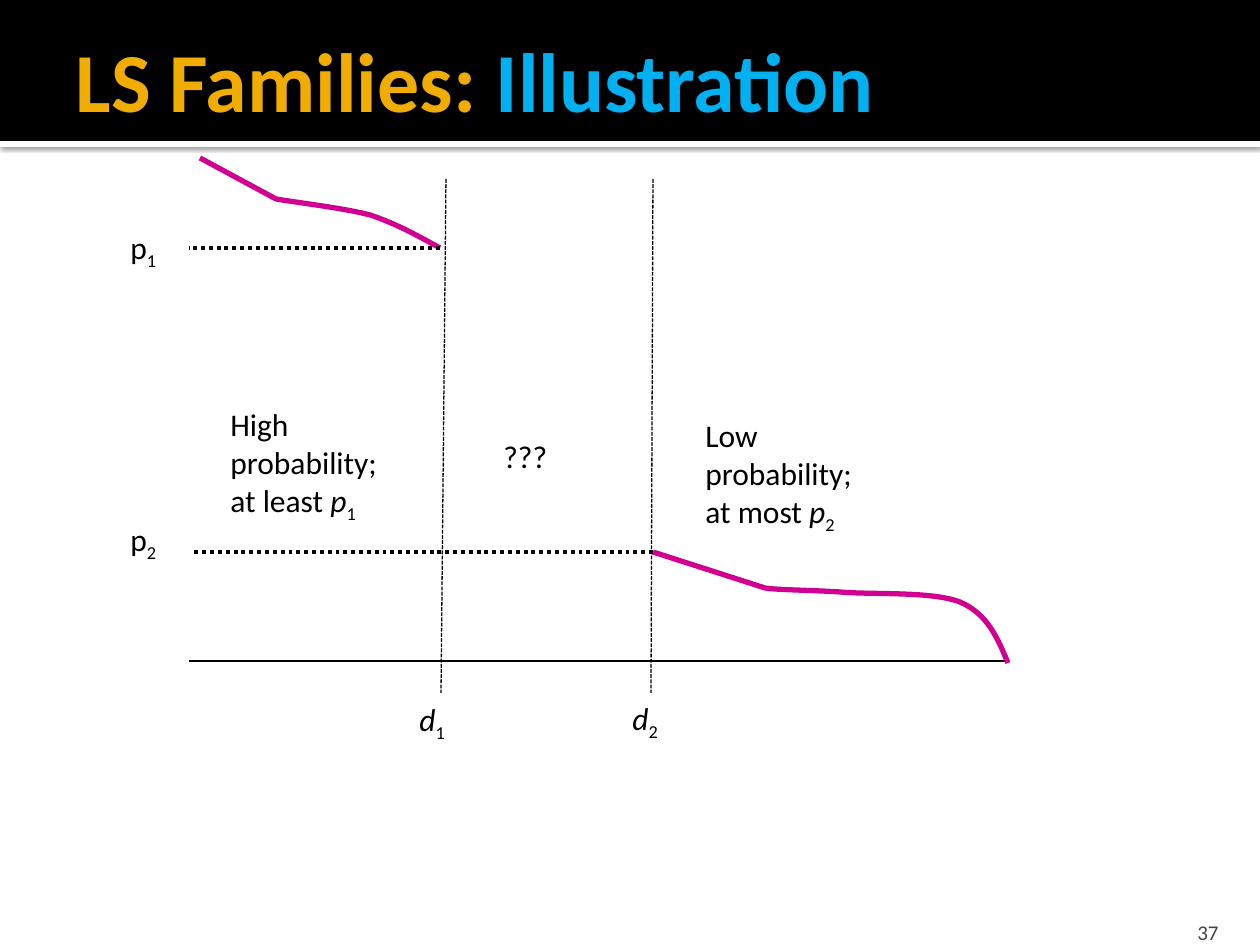
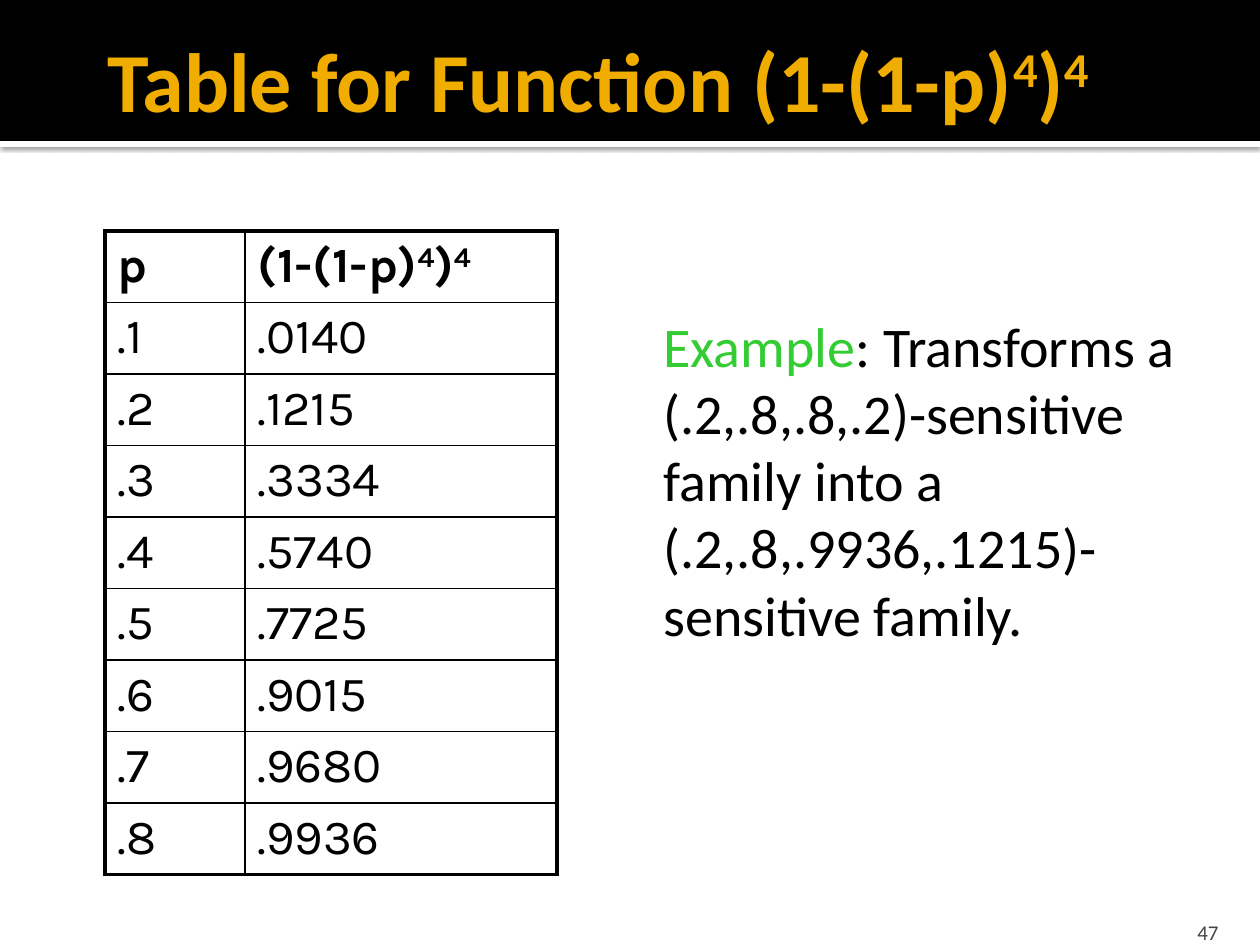
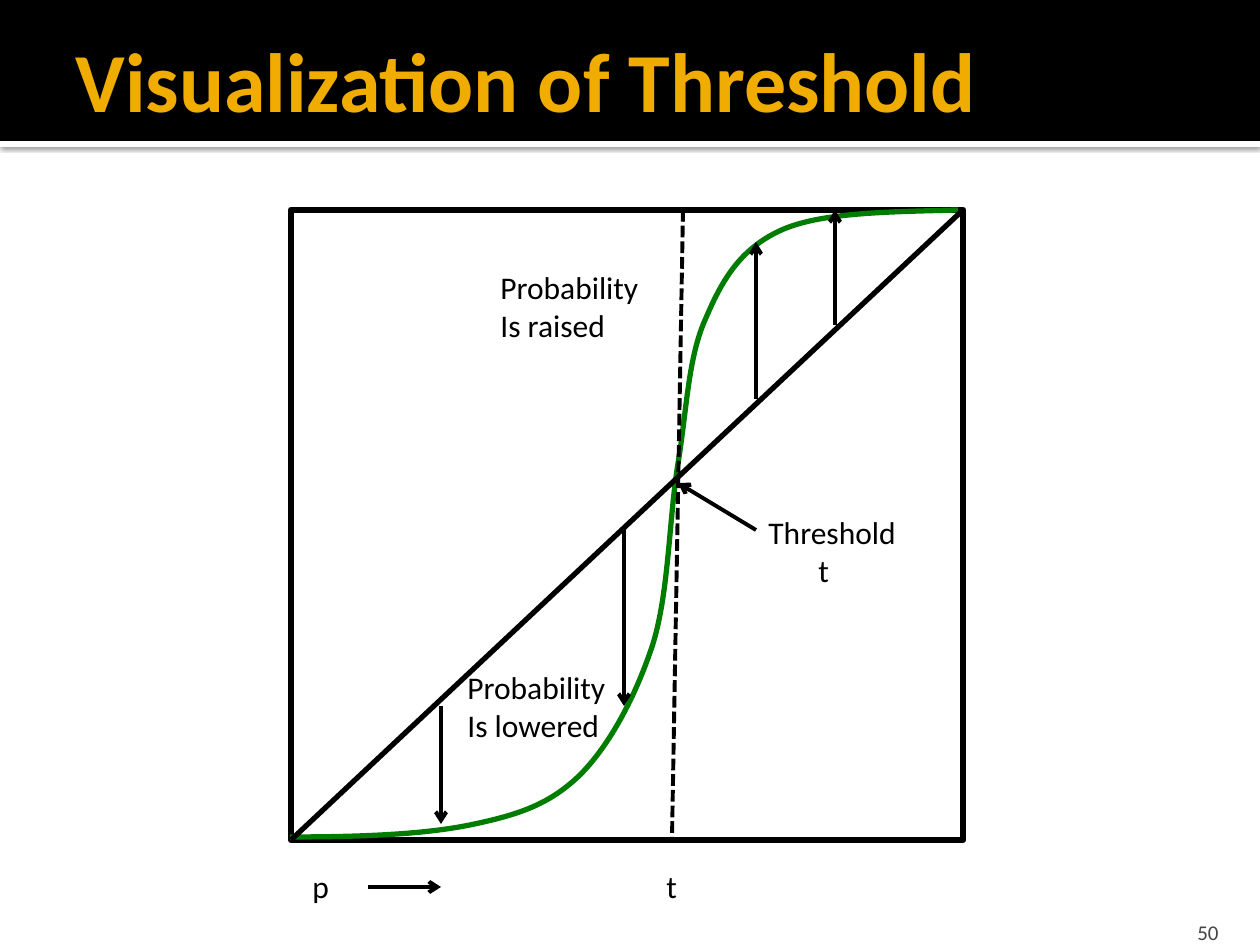
from dataclasses import dataclass

from pptx import Presentation
from pptx.dml.color import RGBColor
from pptx.enum.dml import MSO_LINE
from pptx.enum.shapes import MSO_CONNECTOR, MSO_SHAPE
from pptx.enum.text import MSO_ANCHOR, MSO_AUTO_SIZE, PP_ALIGN
from pptx.oxml import parse_xml
from pptx.oxml.ns import nsdecls, qn
from pptx.oxml.xmlchemy import OxmlElement
from pptx.util import Emu, Pt

PX_PER_INCH = 126
BLACK = RGBColor(0x00, 0x00, 0x00)
WHITE = RGBColor(0xFF, 0xFF, 0xFF)
GOLD = RGBColor(0xF0, 0xAD, 0x00)
SKY = RGBColor(0x00, 0xB0, 0xF0)
GRAY = RGBColor(0x45, 0x45, 0x45)
LIME = RGBColor(0x33, 0xCC, 0x33)
MAGENTA = RGBColor(0xD1, 0x00, 0x90)
GREEN = RGBColor(0x00, 0x7D, 0x00)
TEXT_FONT = "Calibri"
TABLE_FONT = "Karla"
DASHED = MSO_LINE.SQUARE_DOT
DOTTED = MSO_LINE.ROUND_DOT
TITLE_AREA = (63, 21, 1197, 116)
SUB, SUPER = -25, 30


@dataclass
class Span:
    text: str
    color: RGBColor = None
    italic: bool = False
    base: int = 0


POWER_FORMULA = [Span("(1-(1-p)"), Span("4", base=SUPER),
                 Span(")"), Span("4", base=SUPER)]
POWER_VALUES = [".0140", ".1215", ".3334", ".5740",
                ".7725", ".9015", ".9680", ".9936"]


def px(length):
    return Emu(round(length * 914400 / PX_PER_INCH))


def emu_all(lengths):
    return [px(length) for length in lengths]


def indexed(letter, index, italic=False):
    return [Span(letter, italic=italic), Span(index, base=SUB)]


def write_line(para, content, size, color=BLACK, font=TEXT_FONT, bold=False):
    """Fill a paragraph from a string or a list of spans."""
    para.font.name = font
    para.font.size = Pt(size)
    para.font.bold = bold
    para.font.color.rgb = color
    spans = [Span(content)] if isinstance(content, str) else content
    for span in spans:
        run = para.add_run()
        run.text = span.text
        if span.color is not None:
            run.font.color.rgb = span.color
        if span.italic:
            run.font.italic = True
        if span.base:
            run._r.get_or_add_rPr().set("baseline", str(span.base * 1000))


def add_text(page, area, lines, size=18):
    box = page.shapes.add_textbox(*emu_all(area))
    frame = box.text_frame
    frame.word_wrap = False
    frame.auto_size = MSO_AUTO_SIZE.SHAPE_TO_FIT_TEXT
    for number, content in enumerate(lines):
        para = frame.add_paragraph() if number else frame.paragraphs[0]
        write_line(para, content, size)
    return box


def add_rectangle(page, area, fill):
    shape = page.shapes.add_shape(MSO_SHAPE.RECTANGLE, *emu_all(area))
    shape.shadow.inherit = False
    shape.fill.solid()
    shape.fill.fore_color.rgb = fill
    shape.line.fill.background()
    return shape


def add_line(page, start, end, width, dash=None, arrow=False):
    line = page.shapes.add_connector(MSO_CONNECTOR.STRAIGHT, *emu_all(start + end))
    line.line.color.rgb = BLACK
    line.line.width = Pt(width)
    if dash is not None:
        line.line.dash_style = dash
    if arrow:
        tail = OxmlElement("a:tailEnd")
        tail.set("type", "arrow")
        line.line._get_or_add_ln().append(tail)
    line.element.spPr.append(OxmlElement("a:effectLst"))


def add_curve(page, points, color):
    """Draw cubic Béziers: a start, then two controls and an end per piece."""
    start, *rest = [emu_all(point) for point in points]
    builder = page.shapes.build_freeform(*start)
    builder.add_line_segments(rest, close=False)
    shape = builder.convert_to_shape()
    shape.shadow.inherit = False
    shape.fill.background()
    shape.line.color.rgb = color
    shape.line.width = Pt(3)
    steps = shape.element.findall(".//" + qn("a:lnTo"))
    for first in range(0, len(steps), 3):
        piece = OxmlElement("a:cubicBezTo")
        steps[first].addprevious(piece)
        for step in steps[first:first + 3]:
            piece.append(step[0])
            step.getparent().remove(step)


def add_bands(page, layout):
    """Give the layout its header bands, built on a page and moved there."""
    strip = add_rectangle(page, (0, 141, 1260, 6), WHITE)
    strip.element.spPr.find(qn("a:effectLst")).append(parse_xml(
        f'<a:outerShdw {nsdecls("a")} blurRad="31750" dist="10160" dir="5400000">'
        '<a:srgbClr val="000000"><a:alpha val="60000"/></a:srgbClr></a:outerShdw>'))
    header = add_rectangle(page, (0, 0, 1260, 141), BLACK)
    tree = layout.placeholders[0].element.getparent()
    for number, band in enumerate((strip, header)):
        band.element.nvSpPr.cNvPr.set("id", str(100 + number))
        tree.insert(2 + number, band.element)


def add_page(deck, layout, title, number, area=TITLE_AREA):
    page = deck.slides.add_slide(layout)
    holder = page.shapes.title
    holder.left, holder.top, holder.width, holder.height = emu_all(area)
    frame = holder.text_frame
    frame.auto_size = MSO_AUTO_SIZE.NONE
    frame.vertical_anchor = MSO_ANCHOR.MIDDLE
    frame.margin_left = Pt(7.2)
    frame.margin_top = frame.margin_right = frame.margin_bottom = Pt(3.6)
    para = frame.paragraphs[0]
    para.alignment = PP_ALIGN.LEFT
    write_line(para, title, 48, GOLD, bold=True)

    box = page.shapes.add_textbox(*emu_all((1130, 907, 101, 38)))
    box.text_frame.word_wrap = True
    box.text_frame.vertical_anchor = MSO_ANCHOR.BOTTOM
    box.text_frame.margin_bottom = 0
    para = box.text_frame.paragraphs[0]
    para.alignment = PP_ALIGN.RIGHT
    write_line(para, str(number), 12, GRAY)
    return page


def set_borders(cell, widths):
    """Set black left, right, top and bottom borders, in points."""
    properties = cell._tc.get_or_add_tcPr()
    for side, width in zip("LRTB", widths):
        properties.append(parse_xml(
            f'<a:ln{side} {nsdecls("a")} w="{Pt(width)}"><a:solidFill>'
            f'<a:srgbClr val="{BLACK}"/></a:solidFill></a:ln{side}>'))


def add_grid(page, corner, column_widths, row_height, rows):
    """Add a table with thin inner lines and a thick frame."""
    area = (*corner, sum(column_widths), row_height * len(rows))
    table = page.shapes.add_table(
        len(rows), len(column_widths), *emu_all(area)).table
    table.first_row = table.horz_banding = False
    for column, width in zip(table.columns, column_widths):
        column.width = px(width)
    last_row, last_column = len(rows) - 1, len(column_widths) - 1
    for r, row in enumerate(rows):
        table.rows[r].height = px(row_height)
        for c, content in enumerate(row):
            cell = table.cell(r, c)
            write_line(cell.text_frame.paragraphs[0], content, 28,
                       font=TABLE_FONT, bold=r == 0)
            outer = (c == 0, c == last_column, r == 0, r == last_row)
            set_borders(cell, [2.25 if edge else 1 for edge in outer])
            cell.fill.background()


def draw_families(page):
    add_line(page, (189, 661), (1008, 661), 0.75)
    add_line(page, (446, 179), (441, 693), 0.75, DASHED)
    add_line(page, (653, 179), (651, 693), 0.75, DASHED)
    add_text(page, (407, 694, 57, 54), [indexed("d", "1", italic=True)])
    add_text(page, (620, 693, 57, 54), [indexed("d", "2", italic=True)])
    for left, top, level, bound, index in (
            (218, 399, "High", "at least ", "1"), (693, 410, "Low", "at most ", "2")):
        add_text(page, (left, top, 199, 139),
                 [level, "probability;",
                  [Span(bound)] + indexed("p", index, italic=True)])
    add_text(page, (491, 431, 76, 54), ["???"])
    add_curve(page, [(200, 158), (200, 158), (276, 199), (276, 199),
                     (292, 202), (343, 208), (370, 215),
                     (397, 224), (418, 236), (440, 248)], MAGENTA)
    add_curve(page, [(653, 552), (653, 552), (765, 588), (765, 588),
                     (777, 590), (808, 590), (840, 592),
                     (873, 595), (931, 591), (960, 602),
                     (988, 614), (998, 639), (1008, 663)], MAGENTA)
    add_line(page, (440, 248), (189, 248), 2.25, DOTTED)
    add_line(page, (653, 552), (194, 552), 2.25, DOTTED)
    add_text(page, (118, 222, 52, 50), [indexed("p", "1")])
    add_text(page, (118, 514, 52, 50), [indexed("p", "2")])


def draw_function_table(page):
    rows = [["p", POWER_FORMULA]]
    rows += [[f".{tenth}", value] for tenth, value in enumerate(POWER_VALUES, 1)]
    add_grid(page, (105, 231), (140, 312), 62, rows)
    add_text(page, (651, 305, 553, 352),
             [[Span("Example", LIME), Span(": Transforms a")],
              "(.2,.8,.8,.2)-sensitive", "family into a",
              "(.2,.8,.9936,.1215)-", "sensitive family."], 32)


def draw_threshold(page):
    frame = add_rectangle(page, (291, 210, 672, 630), WHITE)
    frame.line.color.rgb = BLACK
    frame.line.width = Pt(3.78)
    threshold = add_text(page, (756, 507, 158, 89), ["Threshold", "t"])
    indent = threshold.text_frame.paragraphs[1]._p.get_or_add_pPr()
    indent.set("marL", str(px(50)))
    add_text(page, (654, 861, 37, 50), ["t"])
    add_curve(page, [(290, 837), (355, 837), (421, 835), (470, 825),
                     (518, 815), (549, 805), (580, 775),
                     (610, 745), (636, 696), (653, 644),
                     (669, 592), (669, 519), (678, 464),
                     (687, 410), (688, 357), (706, 318),
                     (723, 278), (742, 247), (784, 229),
                     (825, 212), (892, 212), (958, 210)], GREEN)
    add_line(page, (291, 840), (963, 210), 3)
    add_line(page, (683, 210), (672, 840), 2.25, DASHED)
    add_text(page, (455, 662, 169, 89), ["Probability", "Is lowered"])
    add_text(page, (488, 262, 169, 89), ["Probability", "Is raised"])
    add_text(page, (300, 861, 43, 50), ["p"])
    for start, end in (((756, 530), (678, 483)), ((441, 706), (441, 824)),
                       ((624, 530), (624, 706)), ((756, 399), (756, 242)),
                       ((835, 325), (835, 210)), ((368, 887), (441, 887))):
        add_line(page, start, end, 2.25, arrow=True)


def main():
    deck = Presentation()
    deck.slide_width, deck.slide_height = px(1260), px(945)
    layout = deck.slide_layouts.get_by_name("Title Only")

    families = add_page(
        deck, layout, [Span("LS Families: "), Span("Illustration", SKY)], 37)
    add_bands(families, layout)
    draw_families(families)

    draw_function_table(add_page(
        deck, layout, [Span("Table for Function ")] + POWER_FORMULA, 47,
        (95, 0, 1071, 158)))

    draw_threshold(add_page(deck, layout, "Visualization of Threshold", 50))
    deck.save("out.pptx")


if __name__ == "__main__":
    main()
